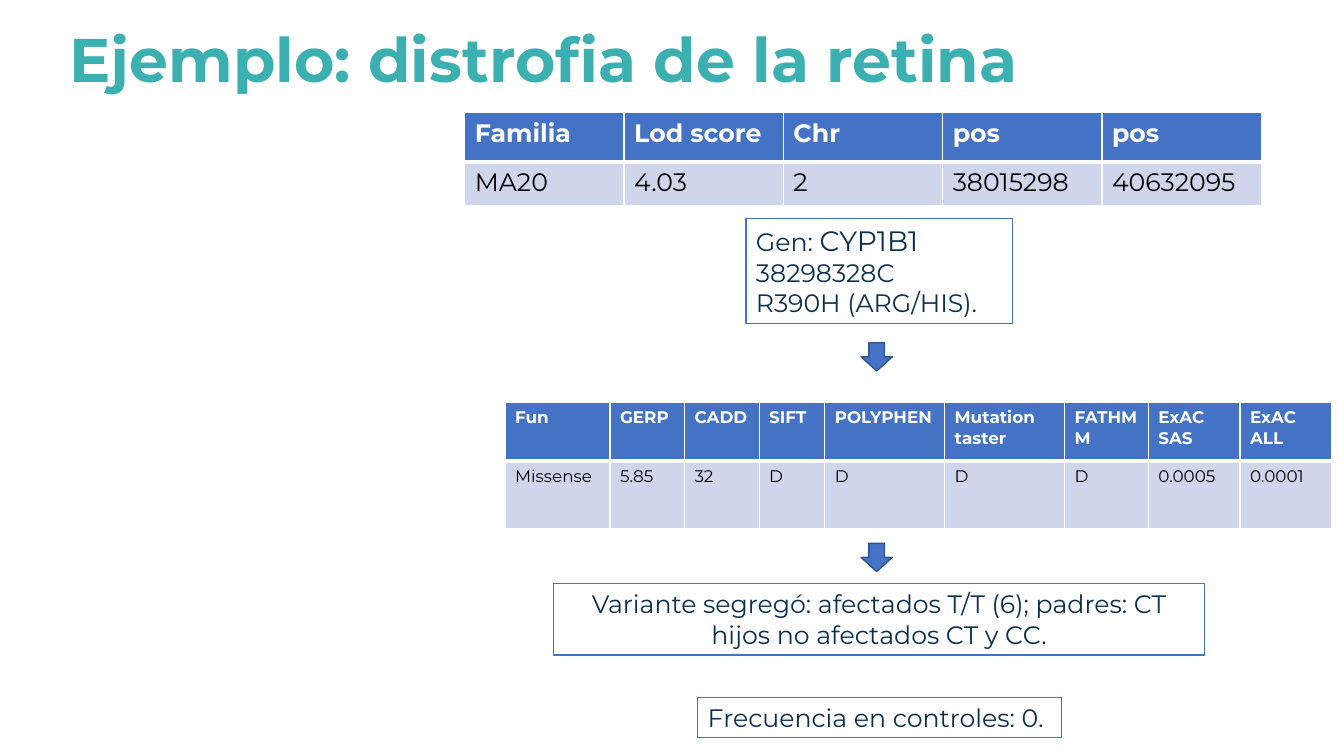
from dataclasses import dataclass

from lxml import etree
from pptx import Presentation
from pptx import util as u
from pptx.dml.color import RGBColor
from pptx.enum import shapes, text
from pptx.oxml.ns import qn

FONT = "Montserrat"
BLUE, PALE, WHITE, BLACK = "4472C4", "CFD5EA", "FFFFFF", "000000"
TEAL, NAVY, ARROW_EDGE = "3CB0B0", "0B2F51", "325491"


@dataclass
class Run:
    text: str
    size: float = 18


@dataclass
class Box:
    left: float
    top: float
    width: float
    height: float
    lines: list[list[Run]]
    align: text.PP_ALIGN = text.PP_ALIGN.LEFT


@dataclass
class Grid:
    left: float
    top: float
    columns: list[float]
    heights: list[float]
    size: float
    rows: list[list[str]]


GRIDS = [
    Grid(4.61, 1.12, [1.58] * 5, [0.49, 0.43], 18, [
        ["Familia", "Lod score", "Chr", "pos", "pos"],
        ["MA20", "4.03", "2", "38015298", "40632095"],
    ]),
    Grid(5.01, 3.99, [1.04, 0.74, 0.74, 0.65, 1.19, 1.19, 0.83, 0.91, 0.91],
         [0.58, 0.67], 12, [
        ["Fun", "GERP", "CADD", "SIFT", "POLYPHEN", "Mutation taster",
         "FATHMM", "ExAC\nSAS", "ExAC ALL"],
        ["Missense", "5.85", "32", "D", "D", "D", "D", "0.0005", "0.0001"],
    ]),
]

BOXES = [
    Box(7.4, 2.17, 2.64, 1.04, [
        [Run("Gen: "), Run("CYP1B1", 20)],
        [Run("38298328C")],
        [Run("R390H (ARG/HIS).")],
    ]),
    Box(5.49, 5.79, 6.46, 0.71, [
        [Run("Variante segregó: afectados T/T (6); padres: CT "
             "hijos no afectados CT y CC.")],
    ], text.PP_ALIGN.CENTER),
    Box(6.92, 6.92, 3.61, 0.4, [[Run("Frecuencia en controles: 0.")]]),
]

ARROW_TOPS = [3.4, 5.39]


def paint(target, color: str) -> None:
    target.solid()
    target.fore_color.rgb = RGBColor.from_string(color)


def add_run(p, content: str, size: float, color: str, bold: bool = False) -> None:
    r = p.add_run()
    r.text = content
    r.font.name = FONT
    r.font.size = u.Pt(size)
    r.font.bold = bold
    paint(r.font.fill, color)


def add_shape(s, kind, left: float, top: float, width: float, height: float,
              fill: str, line: str):
    sp = s.shapes.add_shape(kind, u.Inches(left), u.Inches(top),
                            u.Inches(width), u.Inches(height))
    sp.shadow.inherit = False
    paint(sp.fill, fill)
    paint(sp.line.fill, line)
    sp.line.width = u.Pt(1)
    return sp


def add_box(s, box: Box) -> None:
    sp = add_shape(s, shapes.MSO_SHAPE.RECTANGLE, box.left, box.top,
                   box.width, box.height, WHITE, BLUE)
    tf = sp.text_frame
    tf.word_wrap = True
    tf.auto_size = text.MSO_AUTO_SIZE.SHAPE_TO_FIT_TEXT
    tf.vertical_anchor = text.MSO_ANCHOR.TOP
    for i, line in enumerate(box.lines):
        p = tf.add_paragraph() if i else tf.paragraphs[0]
        p.alignment = box.align
        for run in line:
            add_run(p, run.text, run.size, NAVY)


def add_borders(cell, top: float, bottom: float) -> None:
    tc_pr = cell._tc.get_or_add_tcPr()
    for side, width in (("L", 1), ("R", 1), ("T", top), ("B", bottom)):
        ln = etree.SubElement(tc_pr, qn(f"a:ln{side}"), w=str(u.Pt(width)))
        fill = etree.SubElement(ln, qn("a:solidFill"))
        etree.SubElement(fill, qn("a:srgbClr"), val=WHITE)


def add_grid(s, grid: Grid) -> None:
    table = s.shapes.add_table(
        len(grid.rows), len(grid.columns), u.Inches(grid.left), u.Inches(grid.top),
        u.Inches(sum(grid.columns)), u.Inches(sum(grid.heights))).table
    for column, width in zip(table.columns, grid.columns):
        column.width = u.Inches(width)
    for i, (row, height) in enumerate(zip(grid.rows, grid.heights)):
        table.rows[i].height = u.Inches(height)
        header = i == 0
        for j, content in enumerate(row):
            cell = table.cell(i, j)
            add_borders(cell, 1 if header else 3, 3 if header else 1)
            paint(cell.fill, BLUE if header else PALE)
            tf = cell.text_frame
            for k, line in enumerate(content.split("\n")):
                p = tf.add_paragraph() if k else tf.paragraphs[0]
                add_run(p, line, grid.size, WHITE if header else BLACK, header)


def add_title(s, content: str) -> None:
    sp = s.shapes.title
    sp.left, sp.top = u.Inches(0.59), u.Inches(0)
    sp.width, sp.height = u.Inches(10.33), u.Inches(1.25)
    tf = sp.text_frame
    tf.word_wrap = True
    tf.auto_size = text.MSO_AUTO_SIZE.NONE
    tf.vertical_anchor = text.MSO_ANCHOR.MIDDLE
    p = tf.paragraphs[0]
    p.alignment = text.PP_ALIGN.LEFT
    p.line_spacing = 0.9
    add_run(p, content, 44, TEAL, True)


def main() -> None:
    prs = Presentation()
    prs.slide_width, prs.slide_height = u.Inches(13.33), u.Inches(7.5)
    s = prs.slides.add_slide(prs.slide_layouts.get_by_name("Title Only"))
    paint(s.background.fill, WHITE)
    add_title(s, "Ejemplo: distrofia de la retina")
    for grid in GRIDS:
        add_grid(s, grid)
    for box in BOXES:
        add_box(s, box)
    for top in ARROW_TOPS:
        add_shape(s, shapes.MSO_SHAPE.DOWN_ARROW, 8.54, top, 0.31, 0.28,
                  BLUE, ARROW_EDGE)
    prs.save("out.pptx")


if __name__ == "__main__":
    main()
